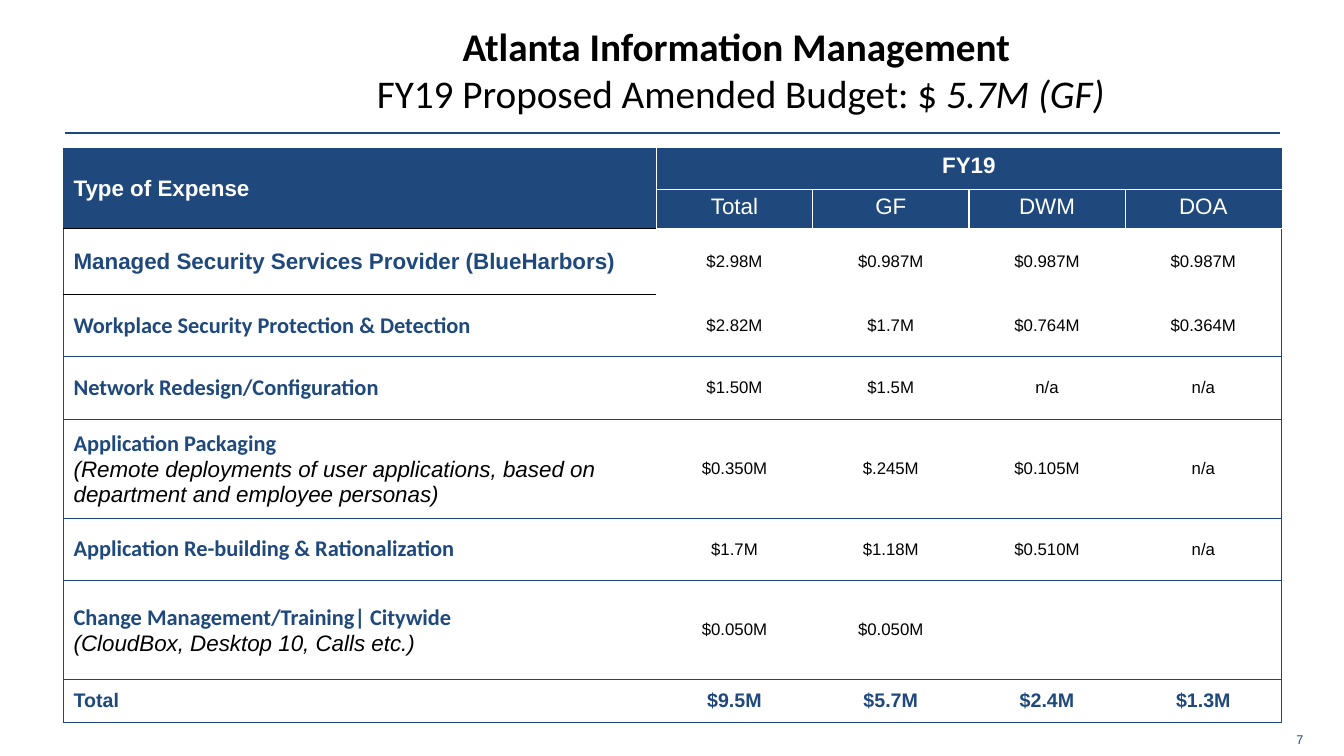
from collections import namedtuple

from lxml import etree
from pptx import Presentation
from pptx.dml.color import RGBColor
from pptx.enum.shapes import MSO_CONNECTOR
from pptx.enum.text import MSO_ANCHOR, PP_ALIGN
from pptx.oxml.ns import qn
from pptx.util import Inches, Pt

STRAIGHT = MSO_CONNECTOR.STRAIGHT
MIDDLE, TOP = MSO_ANCHOR.MIDDLE, MSO_ANCHOR.TOP
LEFT, CENTER = PP_ALIGN.LEFT, PP_ALIGN.CENTER

COLORS = {"navy": "1F497D", "border": "1C477D", "white": "FFFFFF", "black": "000000"}
GRID_COLUMNS, GRID_ROWS = 1333, 750
UNIT = Inches(0.01)

Box = namedtuple("Box", "left top width height")
TITLE_BOX = Box(192, 16, 1080, 106)
RULE_BOX = Box(64, 132, 1206, 0)
TABLE_BOX = Box(63, 147, 1208, 570)
NUMBER_BOX = Box(1276, 722, 34, 24)

COLUMN_UNITS = [588] + [155] * 4
ROW_UNITS = [41, 39, 65, 62, 62, 98, 62, 98, 43]
HEADER_ROWS = 2

HEADING = {"size": 16, "name": "Arial", "bold": True, "color": "white"}
SUBHEADING = HEADING | {"bold": False}
PROVIDER = HEADING | {"color": "navy"}
EXPENSE = PROVIDER | {"name": "Calibri"}
DETAIL = {"size": 16, "name": "Arial", "italic": True, "color": "black"}
AMOUNT = {"size": 12, "name": "Arial", "color": "black"}
TOTAL = PROVIDER | {"size": 14}
TITLE = {"size": 28, "name": "Calibri", "color": "black"}
NUMBER = {"size": 9, "name": "Arial", "color": "navy"}

EXPENSES = [
    ([[("Managed Security Services Provider (BlueHarbors)", PROVIDER)]],
     ["$2.98M", "$0.987M", "$0.987M", "$0.987M"]),
    ([[("Workplace Security Protection & Detection", EXPENSE)]],
     ["$2.82M", "$1.7M", "$0.764M", "$0.364M"]),
    ([[("Network Redesign/Configuration", EXPENSE)]],
     ["$1.50M", "$1.5M", "n/a", "n/a"]),
    ([[("Application Packaging", EXPENSE)],
      [("(Remote deployments of user applications, based on "
        "department and employee personas)", DETAIL)]],
     ["$0.350M", "$.245M", "$0.105M", "n/a"]),
    ([[("Application Re-building & Rationalization", EXPENSE)]],
     ["$1.7M", "$1.18M", "$0.510M", "n/a"]),
    ([[("Change Management/Training| Citywide", EXPENSE)],
      [("(CloudBox, Desktop 10, Calls etc.)", DETAIL)]],
     ["$0.050M", "$0.050M", "", ""]),
]
TOTALS = ["$9.5M", "$5.7M", "$2.4M", "$1.3M"]


def rgb(name):
    return RGBColor.from_string(COLORS[name])


def scale(box):
    return [length * UNIT for length in box]


def write_lines(frame, lines, align=LEFT):
    para = frame.paragraphs[0]
    para.alignment = align
    for index, line in enumerate(lines):
        if index:
            para.add_line_break()
        for text, style in line:
            span = para.add_run()
            span.text = text
            for key, value in style.items():
                if key == "color":
                    span.font.color.rgb = rgb(value)
                else:
                    setattr(span.font, key, Pt(value) if key == "size" else value)


def add_text(page, box, lines, align, layout):
    frame = page.shapes.add_textbox(*scale(box)).text_frame
    for key, value in layout.items():
        setattr(frame, key, value)
    write_lines(frame, lines, align)


def add_title(page, box):
    lines = [
        [("Atlanta Information Management ", TITLE | {"bold": True})],
        [("FY19 Proposed Amended Budget: $", TITLE),
         (" 5.7M (GF)", TITLE | {"italic": True})],
    ]
    layout = {"word_wrap": True, "vertical_anchor": MIDDLE, "margin_left": Inches(0.15)}
    add_text(page, box, lines, CENTER, layout)


def add_rule(page, box):
    left, top, width, height = scale(box)
    rule = page.shapes.add_connector(STRAIGHT, left, top, left + width, top + height)
    rule.line.color.rgb = rgb("navy")
    rule.line.width = Pt(1.5)
    etree.SubElement(rule._element.spPr, qn("a:effectLst"))


def add_page_number(page, box):
    layout = {"word_wrap": False, "margin_top": Inches(0.04), "margin_bottom": Inches(0.04)}
    add_text(page, box, [[("7", NUMBER)]], LEFT, layout)


def horizontal_border(row, column):
    if row in (HEADER_ROWS, HEADER_ROWS + 1) and column == 0:
        return "black"
    if row in (1, HEADER_ROWS):
        return "white"
    return None if row == HEADER_ROWS + 1 else "border"


def vertical_border(row, edge):
    if edge in (0, len(COLUMN_UNITS)):
        return "border"
    return "white" if row < HEADER_ROWS else None


def draw_borders(cell, row, column):
    edges = {
        "a:lnL": vertical_border(row, column),
        "a:lnR": vertical_border(row, column + cell.span_width),
        "a:lnT": horizontal_border(row, column),
        "a:lnB": horizontal_border(row + cell.span_height, column),
    }
    properties = cell._tc.get_or_add_tcPr()
    for tag, color in edges.items():
        width = Pt(0.75) if color == "border" else Pt(1)
        line = etree.SubElement(properties, qn(tag), w=str(width))
        if color:
            fill = etree.SubElement(line, qn("a:solidFill"))
            etree.SubElement(fill, qn("a:srgbClr"), val=COLORS[color])
        else:
            etree.SubElement(line, qn("a:noFill"))


def budget_rows():
    yield [[[("Type of Expense", HEADING)]], [[("FY19", HEADING)]], [], [], []]
    yield [[]] + [[[(name, SUBHEADING)]] for name in ("Total", "GF", "DWM", "DOA")]
    for expense, amounts in EXPENSES:
        yield [expense] + [[[(amount, AMOUNT)]] if amount else [] for amount in amounts]
    yield [[[(text, TOTAL)]] for text in ["Total"] + TOTALS]


def add_budget_table(page, box):
    table = page.shapes.add_table(len(ROW_UNITS), len(COLUMN_UNITS), *scale(box)).table
    table.first_row = table.horz_banding = False
    for column, units in zip(table.columns, COLUMN_UNITS):
        column.width = units * UNIT
    for row, units in zip(table.rows, ROW_UNITS):
        row.height = units * UNIT
    table.cell(0, 0).merge(table.cell(1, 0))
    table.cell(0, 1).merge(table.cell(0, 4))

    for row, entries in enumerate(budget_rows()):
        for column, lines in enumerate(entries):
            cell = table.cell(row, column)
            if cell.is_spanned:
                continue
            draw_borders(cell, row, column)
            header = row < HEADER_ROWS
            if header:
                cell.fill.solid()
                cell.fill.fore_color.rgb = rgb("navy")
            else:
                cell.fill.background()
            cell.vertical_anchor = TOP if header and column else MIDDLE
            write_lines(cell.text_frame, lines, CENTER if column else LEFT)


def main():
    deck = Presentation()
    deck.slide_width = GRID_COLUMNS * UNIT
    deck.slide_height = GRID_ROWS * UNIT
    page = deck.slides.add_slide(deck.slide_layouts[6])
    add_page_number(page, NUMBER_BOX)
    add_rule(page, RULE_BOX)
    add_title(page, TITLE_BOX)
    add_budget_table(page, TABLE_BOX)
    deck.save("out.pptx")


if __name__ == "__main__":
    main()
